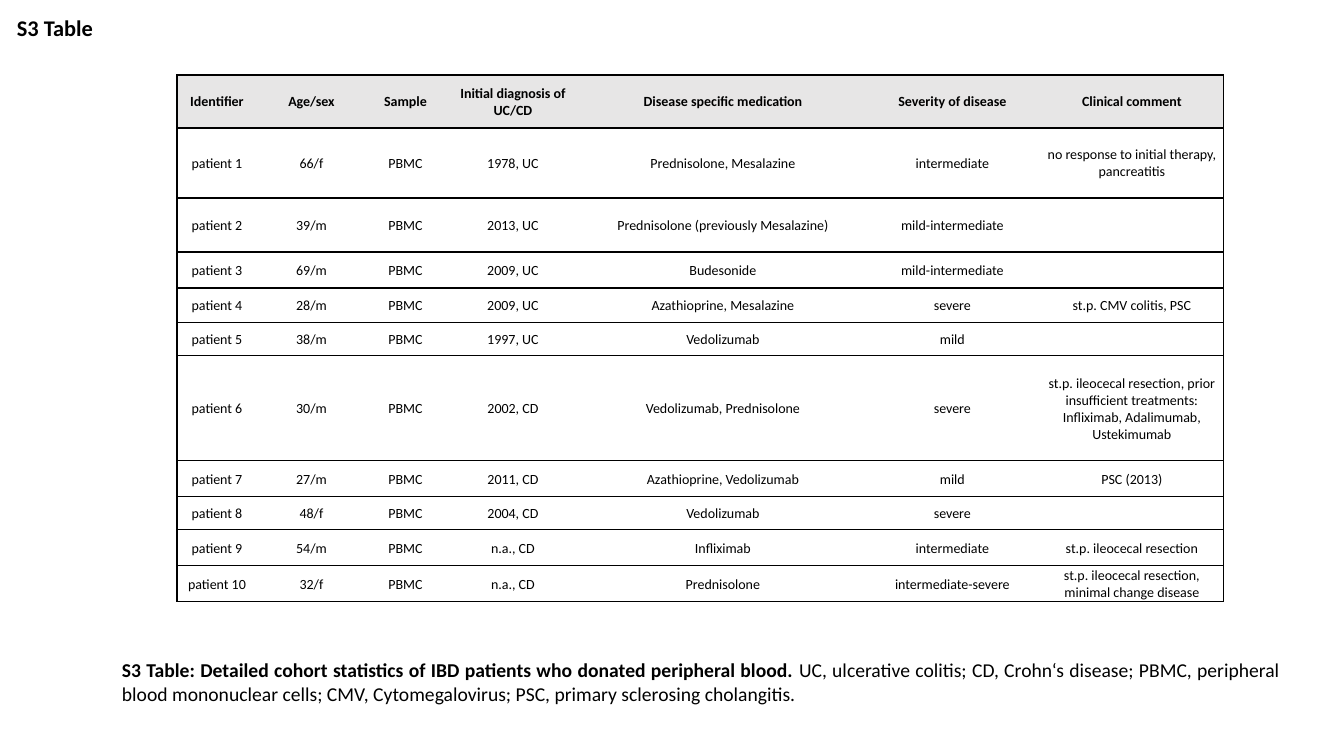
from dataclasses import dataclass

from lxml.etree import SubElement
from pptx import Presentation
from pptx.dml.color import RGBColor
from pptx.enum.text import MSO_ANCHOR, MSO_AUTO_SIZE, PP_ALIGN
from pptx.oxml.ns import qn
from pptx.slide import Slide
from pptx.table import Table, _Cell
from pptx.text.text import TextFrame, _Run
from pptx.util import Emu, Pt


@dataclass(frozen=True)
class Theme:
    font: str = "Calibri"
    ink: str = "000000"
    header_fill: str = "E7E6E6"
    title_size: int = 16
    caption_size: int = 14
    cell_size: int = 10
    border: int = 1


@dataclass(frozen=True)
class Box:
    left: int
    top: int
    width: int
    height: int


@dataclass(frozen=True)
class Patient:
    age_sex: str
    diagnosis: str
    medication: str
    severity: str
    comment: str = ""


THEME = Theme()
SLIDE_WIDTH, SLIDE_HEIGHT = 1344, 756
TITLE_BOX = Box(7, 12, 625, 28)
CAPTION_BOX = Box(112, 653, 1178, 58)
TABLE_LEFT, TABLE_TOP = 177, 75
COLUMN_WIDTHS = [80, 109, 79, 136, 284, 175, 184]
ROW_HEIGHTS = [53, 70, 54, 36, 35, 33, 105, 36, 33, 36, 36]
CELL_MARGIN = 1

HEADERS = [
    "Identifier", "Age/sex", "Sample", "Initial diagnosis of UC/CD",
    "Disease specific medication", "Severity of disease", "Clinical comment",
]
PATIENTS = [
    Patient("66/f", "1978, UC", "Prednisolone, Mesalazine", "intermediate",
            "no response to initial therapy, pancreatitis"),
    Patient("39/m", "2013, UC", "Prednisolone (previously Mesalazine)", "mild-intermediate"),
    Patient("69/m", "2009, UC", "Budesonide", "mild-intermediate"),
    Patient("28/m", "2009, UC", "Azathioprine, Mesalazine", "severe",
            "st.p. CMV colitis, PSC"),
    Patient("38/m", "1997, UC", "Vedolizumab", "mild"),
    Patient("30/m", "2002, CD", "Vedolizumab, Prednisolone", "severe",
            "st.p. ileocecal resection, prior insufficient treatments: "
            "Infliximab, Adalimumab, Ustekimumab"),
    Patient("27/m", "2011, CD", "Azathioprine, Vedolizumab", "mild", "PSC (2013)"),
    Patient("48/f", "2004, CD", "Vedolizumab", "severe"),
    Patient("54/m", "n.a., CD", "Infliximab", "intermediate", "st.p. ileocecal resection"),
    Patient("32/f", "n.a., CD", "Prednisolone", "intermediate-severe",
            "st.p. ileocecal resection, minimal change disease"),
]
CAPTION_LEAD = ("S3 Table: Detailed cohort statistics of IBD patients "
                "who donated peripheral blood. ")
CAPTION_KEY = ("UC, ulcerative colitis; CD, Crohn‘s disease; PBMC, peripheral blood "
               "mononuclear cells; CMV, Cytomegalovirus; PSC, primary sclerosing cholangitis.")


def px(length: int) -> Emu:
    return Emu(round(length * 12192000 / SLIDE_WIDTH))


def style_run(r: _Run, size: int, bold: bool) -> None:
    r.font.name = THEME.font
    r.font.size = Pt(size)
    r.font.bold = bold
    r.font.color.rgb = RGBColor.from_string(THEME.ink)


def add_text_box(slide: Slide, box: Box) -> TextFrame:
    sp = slide.shapes.add_textbox(px(box.left), px(box.top), px(box.width), px(box.height))
    tf = sp.text_frame
    tf.word_wrap = True
    return tf


def add_title(slide: Slide) -> None:
    p = add_text_box(slide, TITLE_BOX).paragraphs[0]
    p.text = "S3 Table"
    p.line_spacing = 0.9
    style_run(p.runs[0], THEME.title_size, True)


def add_caption(slide: Slide) -> None:
    tf = add_text_box(slide, CAPTION_BOX)
    tf.auto_size = MSO_AUTO_SIZE.SHAPE_TO_FIT_TEXT
    p = tf.paragraphs[0]
    p.alignment = PP_ALIGN.JUSTIFY
    p.space_before, p.space_after = Pt(6), Pt(12)
    for text, bold in ((CAPTION_LEAD, True), (CAPTION_KEY, False)):
        r = p.add_run()
        r.text = text
        style_run(r, THEME.caption_size, bold)


def set_borders(cell: _Cell, first: bool, last: bool) -> None:
    """Rule the cell above and below, and at the table's outer sides only."""
    tc_pr = cell._tc.get_or_add_tcPr()
    for side, drawn in (("L", first), ("R", last), ("T", True), ("B", True)):
        ln = SubElement(tc_pr, qn(f"a:ln{side}"), w=str(Pt(THEME.border)))
        if drawn:
            fill = SubElement(ln, qn("a:solidFill"))
            SubElement(fill, qn("a:srgbClr"), val=THEME.ink)
        else:
            SubElement(ln, qn("a:noFill"))


def fill_cell(cell: _Cell, text: str, header: bool) -> None:
    cell.vertical_anchor = MSO_ANCHOR.MIDDLE
    cell.margin_left = cell.margin_right = cell.margin_top = px(CELL_MARGIN)
    cell.margin_bottom = 0
    if header:
        cell.fill.solid()
        cell.fill.fore_color.rgb = RGBColor.from_string(THEME.header_fill)
    else:
        cell.fill.background()
    p = cell.text_frame.paragraphs[0]
    p.alignment = PP_ALIGN.CENTER
    if text:
        p.text = text
        style_run(p.runs[0], THEME.cell_size, header)


def table_rows() -> list[list[str]]:
    return [HEADERS] + [
        [f"patient {number}", pt.age_sex, "PBMC", pt.diagnosis,
         pt.medication, pt.severity, pt.comment]
        for number, pt in enumerate(PATIENTS, start=1)
    ]


def add_cohort_table(slide: Slide) -> None:
    rows = table_rows()
    table: Table = slide.shapes.add_table(
        len(rows), len(HEADERS), px(TABLE_LEFT), px(TABLE_TOP),
        px(sum(COLUMN_WIDTHS)), px(sum(ROW_HEIGHTS))).table
    table.first_row = table.horz_banding = False
    for column, width in zip(table.columns, COLUMN_WIDTHS):
        column.width = px(width)
    for row, height in zip(table.rows, ROW_HEIGHTS):
        row.height = px(height)
    for i, texts in enumerate(rows):
        for j, text in enumerate(texts):
            cell = table.cell(i, j)
            set_borders(cell, j == 0, j == len(HEADERS) - 1)
            fill_cell(cell, text, header=i == 0)


def main() -> None:
    prs = Presentation()
    prs.slide_width, prs.slide_height = px(SLIDE_WIDTH), px(SLIDE_HEIGHT)
    slide = prs.slides.add_slide(prs.slide_layouts[6])
    add_title(slide)
    add_caption(slide)
    add_cohort_table(slide)
    prs.save("out.pptx")


if __name__ == "__main__":
    main()
